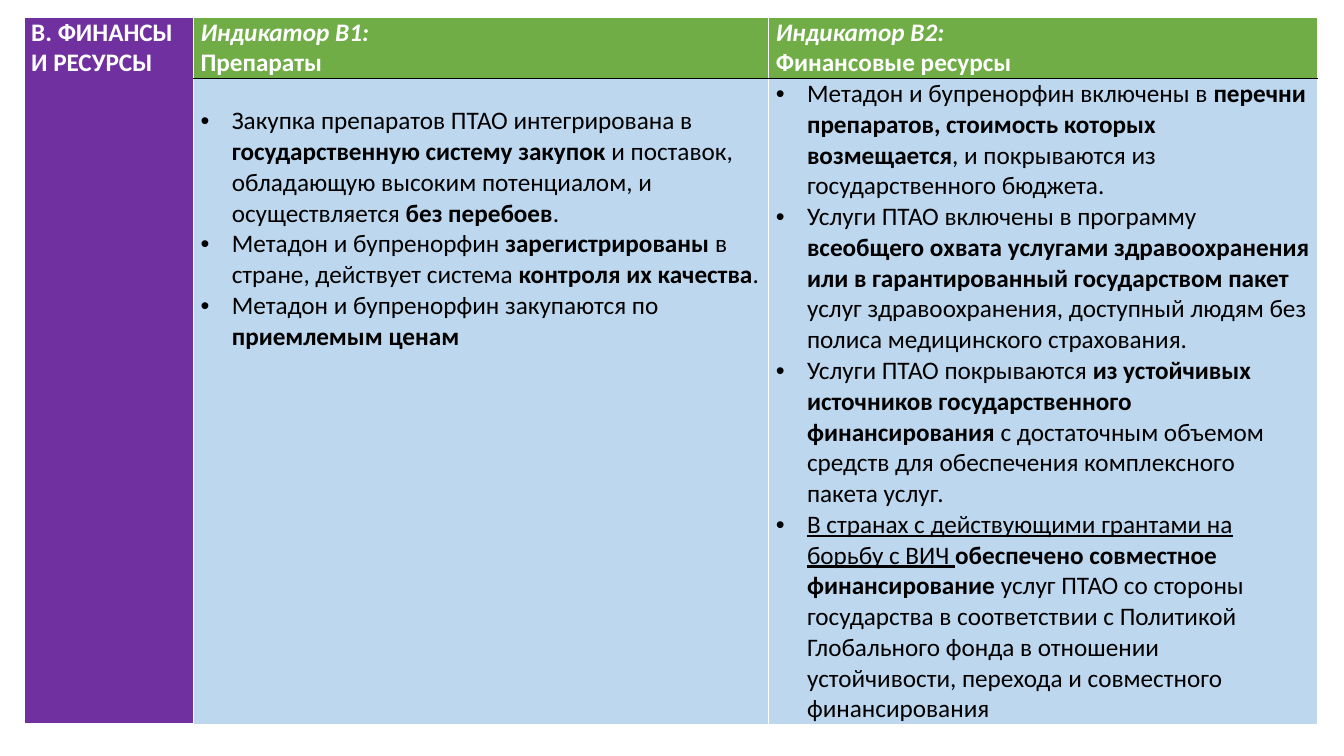
import pptx
import pptx.dml.color
import pptx.oxml
import pptx.oxml.ns
import pptx.util

WIDTH, HEIGHT = 13.33, 7.5
COLUMN_SHARES = (0.126, 0.428, 0.408)
ROW_SHARES = (0.06, 0.835)
PURPLE, GREEN, BLUE = "7030A0", "70AD47", "BDD7EE"
WHITE, BLACK = "FFFFFF", "000000"
PLAIN, BOLD, ITALIC, UNDERLINE = "", "b", "bi", "u"

SECTION = [[("B. ФИНАНСЫ И РЕСУРСЫ", BOLD)]]
INDICATORS = [
    {
        "heading": [[("Индикатор B1:", ITALIC)], [("Препараты", BOLD)]],
        "top": 0.27,
        "criteria": [
            [("Закупка препаратов ПТАО интегрирована в ", PLAIN),
             ("государственную систему закупок ", BOLD),
             ("и поставок, обладающую высоким потенциалом, и осуществляется ", PLAIN),
             ("без перебоев", BOLD), (".", PLAIN)],
            [("Метадон и бупренорфин ", PLAIN), ("зарегистрированы", BOLD),
             (" в стране, действует система ", PLAIN),
             ("контроля их качества", BOLD), (".", PLAIN)],
            [("Метадон и бупренорфин закупаются по ", PLAIN),
             ("приемлемым ценам", BOLD)],
        ],
    },
    {
        "heading": [[("Индикатор B2:", ITALIC)], [("Финансовые ресурсы", BOLD)]],
        "top": 0,
        "criteria": [
            [("Метадон и бупренорфин включены в ", PLAIN),
             ("перечни препаратов, стоимость которых возмещается", BOLD),
             (", и покрываются из государственного бюджета.", PLAIN)],
            [("Услуги ПТАО включены в программу ", PLAIN),
             ("всеобщего охвата услугами здравоохранения или в "
              "гарантированный государством пакет ", BOLD),
             ("услуг здравоохранения, доступный людям без полиса "
              "медицинского страхования.", PLAIN)],
            [("Услуги ПТАО покрываются ", PLAIN),
             ("из устойчивых источников государственного финансирования ", BOLD),
             ("с достаточным объемом средств для обеспечения комплексного "
              "пакета услуг.", PLAIN)],
            [("В странах с действующими грантами на борьбу с ВИЧ ", UNDERLINE),
             ("обеспечено совместное финансирование ", BOLD),
             ("услуг ПТАО со стороны государства в соответствии с Политикой "
              "Глобального фонда в отношении устойчивости, перехода и "
              "совместного финансирования", PLAIN)],
        ],
    },
]


def rgb(value):
    return pptx.dml.color.RGBColor.from_string(value)


def inches(value):
    return pptx.util.Inches(value)


def add_bullet(paragraph):
    properties = paragraph._p.get_or_add_pPr()
    properties.set("marL", str(inches(0.31)))
    properties.set("indent", str(-inches(0.31)))
    namespace = pptx.oxml.ns.nsdecls("a")
    for markup in (f'<a:buFont {namespace} typeface="Arial"/>',
                   f'<a:buChar {namespace} char="•"/>'):
        properties.append(pptx.oxml.parse_xml(markup))


def set_borders(cell, top, bottom, bottom_width=1):
    properties = cell._tc.get_or_add_tcPr()
    sides = (("lnL", WHITE, 1), ("lnR", WHITE, 1),
             ("lnT", top, 1), ("lnB", bottom, bottom_width))
    for position, (side, color, width) in enumerate(sides):
        properties.insert(position, pptx.oxml.parse_xml(
            f'<a:{side} {pptx.oxml.ns.nsdecls("a")} w="{pptx.util.Pt(width)}">'
            f'<a:solidFill><a:srgbClr val="{color}"/></a:solidFill></a:{side}>'))


def fill_cell(cell, paragraphs, background, ink, top=0, bulleted=False):
    cell.fill.solid()
    cell.fill.fore_color.rgb = rgb(background)
    cell.margin_left = cell.margin_right = inches(0.07)
    cell.margin_top, cell.margin_bottom = inches(top), 0
    frame = cell.text_frame
    frame.text = "\n".join("" for _ in paragraphs)
    for paragraph, pieces in zip(frame.paragraphs, paragraphs):
        if bulleted:
            add_bullet(paragraph)
        for wording, style in pieces:
            run = paragraph.add_run()
            run.text = wording
            run.font.name = "Calibri"
            run.font.size = pptx.util.Pt(18)
            run.font.color.rgb = rgb(ink)
            run.font.bold = "b" in style
            run.font.italic = "i" in style
            run.font.underline = "u" in style


def add_indicator_table(slide, left, top, width, height):
    column_widths = [width * share for share in COLUMN_SHARES]
    row_heights = [height * share for share in ROW_SHARES]
    table = slide.shapes.add_table(
        2, 3, inches(left), inches(top),
        inches(sum(column_widths)), inches(sum(row_heights))).table
    table.horz_banding = False
    for column, column_width in zip(table.columns, column_widths):
        column.width = inches(column_width)
    for row, row_height in zip(table.rows, row_heights):
        row.height = inches(row_height)

    section = table.cell(0, 0)
    section.merge(table.cell(1, 0))
    fill_cell(section, SECTION, PURPLE, WHITE)
    set_borders(section, WHITE, WHITE, 3)
    for number, indicator in enumerate(INDICATORS, 1):
        heading, criteria = table.cell(0, number), table.cell(1, number)
        fill_cell(heading, indicator["heading"], GREEN, WHITE)
        set_borders(heading, WHITE, BLACK)
        fill_cell(criteria, indicator["criteria"], BLUE, BLACK,
                  indicator["top"], bulleted=True)
        set_borders(criteria, BLACK, WHITE)


def main():
    deck = pptx.Presentation()
    deck.slide_width, deck.slide_height = inches(WIDTH), inches(HEIGHT)
    slide = deck.slides.add_slide(deck.slide_layouts[6])
    add_indicator_table(slide, 0.24, 0.17, WIDTH, HEIGHT)
    deck.save("out.pptx")


if __name__ == "__main__":
    main()
